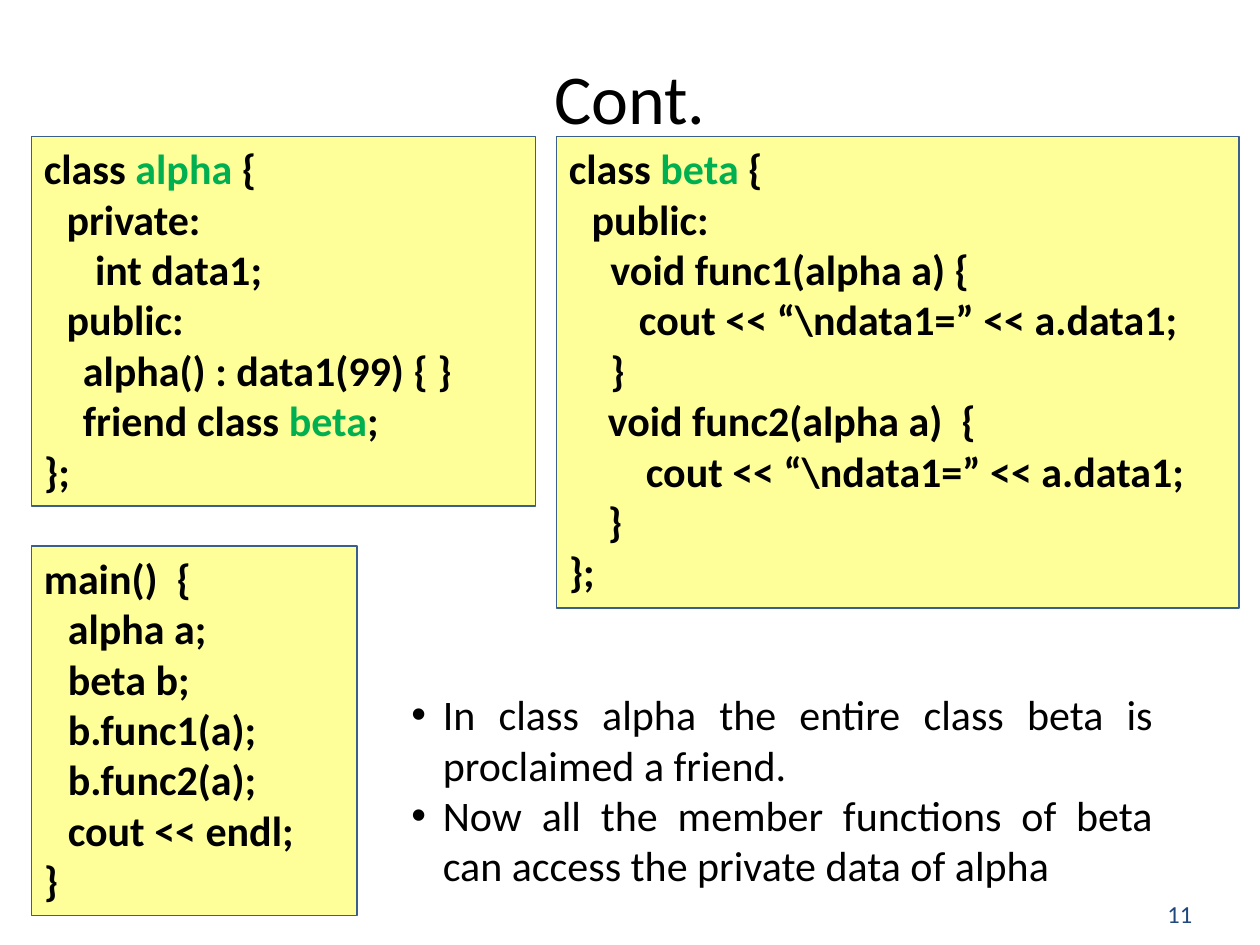
"""Build a slide on friend classes with three code panels and two remarks."""
from dataclasses import dataclass

from lxml import etree
from pptx import Presentation
from pptx import util as u
from pptx.dml.color import RGBColor
from pptx.enum import shapes, text
from pptx.oxml.ns import qn

COLUMNS, ROWS = 120, 90
FONT = "Calibri"
COLOURS = {
    "ink": "000000",
    "name": "00B050",
    "panel": "FFFF00",
    "border": "3A5F8C",
    "number": "1F497D",
}
PANEL_OPACITY = 40

deck = Presentation()
deck.slide_width, deck.slide_height = u.Inches(10), u.Inches(7.5)
page = deck.slides.add_slide(deck.slide_layouts[6])


@dataclass(frozen=True)
class Area:
    column: float
    row: float
    columns: float
    rows: float

    def lengths(self) -> tuple[int, int, int, int]:
        across, down = deck.slide_width / COLUMNS, deck.slide_height / ROWS
        return (round(self.column * across), round(self.row * down),
                round(self.columns * across), round(self.rows * down))


@dataclass(frozen=True)
class Span:
    words: str
    colour: str = "ink"


@dataclass(frozen=True)
class Line:
    spans: tuple[Span, ...]
    indent: float = 0


@dataclass(frozen=True)
class Panel:
    area: Area
    lines: tuple[Line, ...]


def colour(key: str) -> RGBColor:
    return RGBColor.from_string(COLOURS[key])


def code(words: str, indent: float = 0) -> Line:
    return Line((Span(words),), indent)


def naming(before: str, name: str, after: str, indent: float = 0) -> Line:
    return Line((Span(before), Span(name, "name"), Span(after)), indent)


def add_span(para, span: Span, size: float, bold: bool = False) -> None:
    run = para.add_run()
    run.text = span.words
    run.font.name, run.font.size, run.font.bold = FONT, u.Pt(size), bold
    run.font.color.rgb = colour(span.colour)


def set_indent(para, left: float, first: float = 0) -> None:
    properties = para._p.get_or_add_pPr()
    properties.set("marL", str(u.Inches(left)))
    properties.set("indent", str(u.Inches(first)))


def next_para(frame, index: int):
    return frame.add_paragraph() if index else frame.paragraphs[0]


def draw_panel(panel: Panel) -> None:
    box = page.shapes.add_shape(shapes.MSO_SHAPE.RECTANGLE, *panel.area.lengths())
    box.shadow.inherit = False
    box.fill.solid()
    box.fill.fore_color.rgb = colour("panel")
    tint = box.fill._xPr.find(qn("a:solidFill"))[0]
    etree.SubElement(tint, qn("a:alpha"), val=str(PANEL_OPACITY * 1000))
    box.line.color.rgb, box.line.width = colour("border"), u.Pt(0.75)
    frame = box.text_frame
    frame.word_wrap = True
    frame.auto_size = text.MSO_AUTO_SIZE.SHAPE_TO_FIT_TEXT
    frame.vertical_anchor = text.MSO_ANCHOR.TOP
    for index, line in enumerate(panel.lines):
        para = next_para(frame, index)
        para.alignment = text.PP_ALIGN.LEFT
        set_indent(para, line.indent)
        for span in line.spans:
            add_span(para, span, 24, bold=True)


def draw_label(area: Area, span: Span, size: float, align: text.PP_ALIGN) -> None:
    frame = page.shapes.add_textbox(*area.lengths()).text_frame
    frame.word_wrap = True
    frame.vertical_anchor = text.MSO_ANCHOR.MIDDLE
    para = frame.paragraphs[0]
    para.alignment = align
    add_span(para, span, size)


def draw_remarks(area: Area, remarks: tuple[str, ...]) -> None:
    frame = page.shapes.add_textbox(*area.lengths()).text_frame
    frame.word_wrap = True
    frame.auto_size = text.MSO_AUTO_SIZE.SHAPE_TO_FIT_TEXT
    for index, remark in enumerate(remarks):
        para = next_para(frame, index)
        para.alignment = text.PP_ALIGN.JUSTIFY
        set_indent(para, 0.25, -0.25)
        properties = para._p.get_or_add_pPr()
        etree.SubElement(properties, qn("a:buFont"), typeface="Arial")
        etree.SubElement(properties, qn("a:buChar"), char="•")
        add_span(para, Span(remark), 24)


SECTION, MEMBER = 0.18, 0.31
PANELS = (
    Panel(Area(3, 13, 48, 35.2), (
        naming("class ", "alpha", " {"),
        code("private:", SECTION),
        code("   int data1;", SECTION),
        code("public:", SECTION),
        code("alpha() : data1(99) { }", MEMBER),
        naming("friend class ", "beta", ";", MEMBER),
        code("};"),
    )),
    Panel(Area(3, 52, 31, 35.2), (
        code("main()  {"),
        *(code(words, 0.19) for words in (
            "alpha a;", "beta b;", "b.func1(a);", "b.func2(a);", "cout << endl;")),
        code("}"),
    )),
    Panel(Area(53, 13, 65, 44.9), (
        naming("class ", "beta", " {"),
        code("public:", SECTION),
        code("  void func1(alpha a) {", SECTION),
        code("     cout << “\\ndata1=” << a.data1;", SECTION),
        code("  }", SECTION),
        code("void func2(alpha a)  {", MEMBER),
        code("    cout << “\\ndata1=” << a.data1;", MEMBER),
        code("}", MEMBER),
        code("};"),
    )),
)

draw_label(Area(110, 85, 8, 4), Span("11", "number"), 14, text.PP_ALIGN.LEFT)
draw_label(Area(6, 4.5, 108, 9.4), Span("Cont."), 40, text.PP_ALIGN.CENTER)
for panel in PANELS:
    draw_panel(panel)
draw_remarks(Area(38, 65, 73, 20.6), (
    "In class alpha the entire class beta is proclaimed a friend.",
    "Now all the member functions of beta can access the private data of alpha",
))
deck.save("out.pptx")
